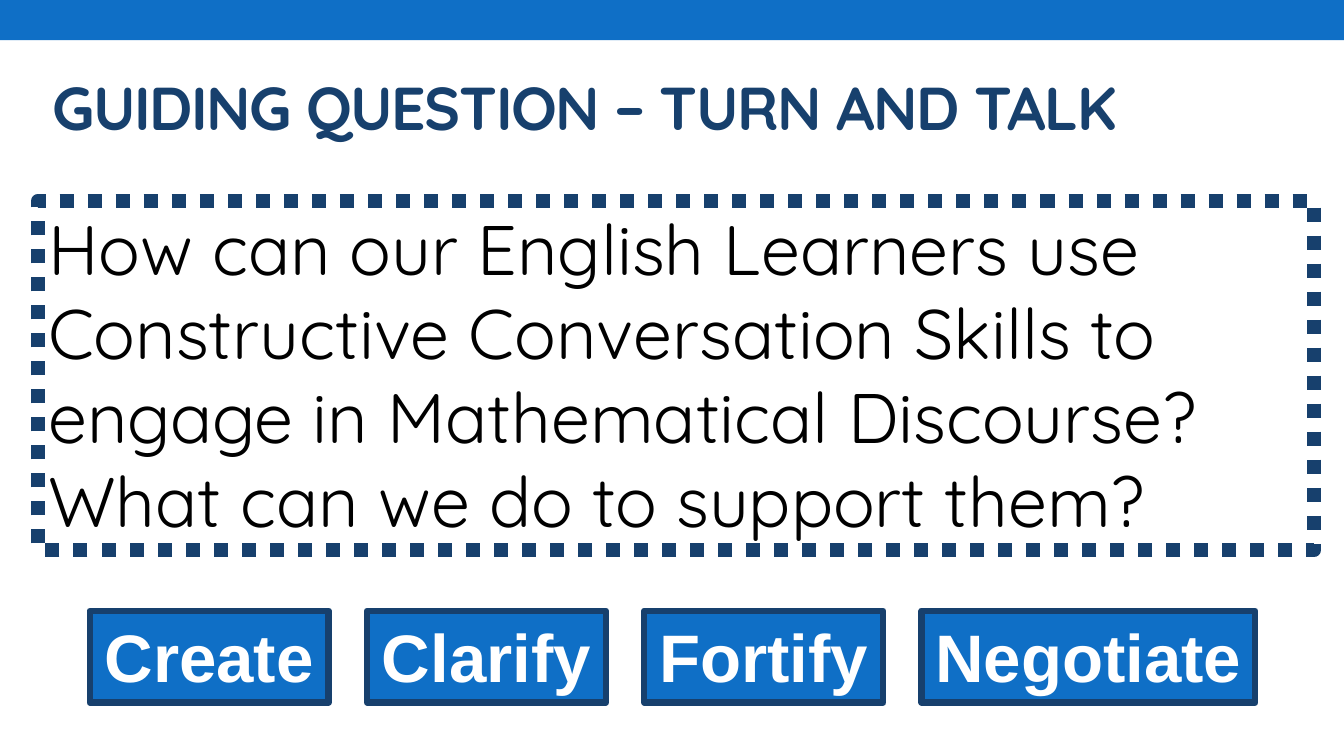
from dataclasses import dataclass

from pptx import Presentation
from pptx import util as u
from pptx.dml.color import RGBColor
from pptx.enum import dml, shapes, text


@dataclass(frozen=True)
class Theme:
    blue: RGBColor = RGBColor(0x0F, 0x6F, 0xC6)
    navy: RGBColor = RGBColor(0x17, 0x40, 0x6D)
    white: RGBColor = RGBColor(0xFF, 0xFF, 0xFF)
    black: RGBColor = RGBColor(0, 0, 0)
    heading_font: str = "Quicksand"
    skill_font: str = "Arial"
    title_size: float = 43.2
    question_size: float = 50
    skill_size: float = 48


THEME = Theme()
SLIDE_WIDTH, SLIDE_HEIGHT = 13.33, 7.5
SKILLS_LEFT, SKILLS_TOP, SKILL_HEIGHT, SKILL_GAP = 0.89, 6.06, 0.91, 0.38
SKILLS = [("Create", 2.37), ("Clarify", 2.37), ("Fortify", 2.37), ("Negotiate", 3.31)]
QUESTIONS = [
    "How can our English Learners use Constructive Conversation Skills to engage in Mathematical Discourse?",
    "What can we do to support them?",
]


def style(paragraph, font_name, size, color, bold, align):
    paragraph.alignment = align
    font = paragraph.font
    font.name, font.size, font.bold = font_name, u.Pt(size), bold
    font.color.rgb = color


def add_panel(slide, left, top, width, height, fill, border=None, border_width=0):
    panel = slide.shapes.add_shape(
        shapes.MSO_SHAPE.RECTANGLE, *map(u.Inches, (left, top, width, height)))
    panel.shadow.inherit = False
    panel.fill.solid()
    panel.fill.fore_color.rgb = fill
    if border is None:
        panel.line.fill.background()
    else:
        panel.line.color.rgb = border
        panel.line.width = u.Pt(border_width)
    return panel


def write_lines(panel, lines, *look):
    frame = panel.text_frame
    frame.text = "\n".join(lines)
    frame.word_wrap = True
    frame.auto_size = text.MSO_AUTO_SIZE.SHAPE_TO_FIT_TEXT
    frame.vertical_anchor = text.MSO_ANCHOR.TOP
    for paragraph in frame.paragraphs:
        style(paragraph, *look)


def set_title(slide, wording):
    title = slide.shapes.title
    title.left, title.top, title.width, title.height = map(u.Inches, (0.42, 0.62, 11.16, 0.87))
    frame = title.text_frame
    frame.text = wording
    frame.auto_size = text.MSO_AUTO_SIZE.NONE
    frame.vertical_anchor = text.MSO_ANCHOR.MIDDLE
    heading = frame.paragraphs[0]
    style(heading, THEME.heading_font, THEME.title_size, THEME.navy, True, text.PP_ALIGN.LEFT)
    heading.runs[0].font._element.set("spc", "-100")


def add_question(slide):
    question = add_panel(slide, 0.38, 1.99, 12.65, 3.47, THEME.white, THEME.navy, 10)
    question.line.dash_style = dml.MSO_LINE.ROUND_DOT
    write_lines(question, QUESTIONS, THEME.heading_font, THEME.question_size,
                THEME.black, False, text.PP_ALIGN.LEFT)


def add_skills(slide):
    left = SKILLS_LEFT
    for name, width in SKILLS:
        skill = add_panel(slide, left, SKILLS_TOP, width, SKILL_HEIGHT,
                          THEME.blue, THEME.navy, 4.5)
        write_lines(skill, [name], THEME.skill_font, THEME.skill_size,
                    THEME.white, True, text.PP_ALIGN.CENTER)
        left += width + SKILL_GAP


def main():
    deck = Presentation()
    deck.slide_width, deck.slide_height = u.Inches(SLIDE_WIDTH), u.Inches(SLIDE_HEIGHT)
    slide = deck.slides.add_slide(deck.slide_layouts.get_by_name("Title Only"))
    add_panel(slide, 0, 0, SLIDE_WIDTH, 0.4, THEME.blue)
    set_title(slide, "GUIDING QUESTION – TURN AND TALK")
    add_question(slide)
    add_skills(slide)
    deck.save("out.pptx")


if __name__ == "__main__":
    main()
